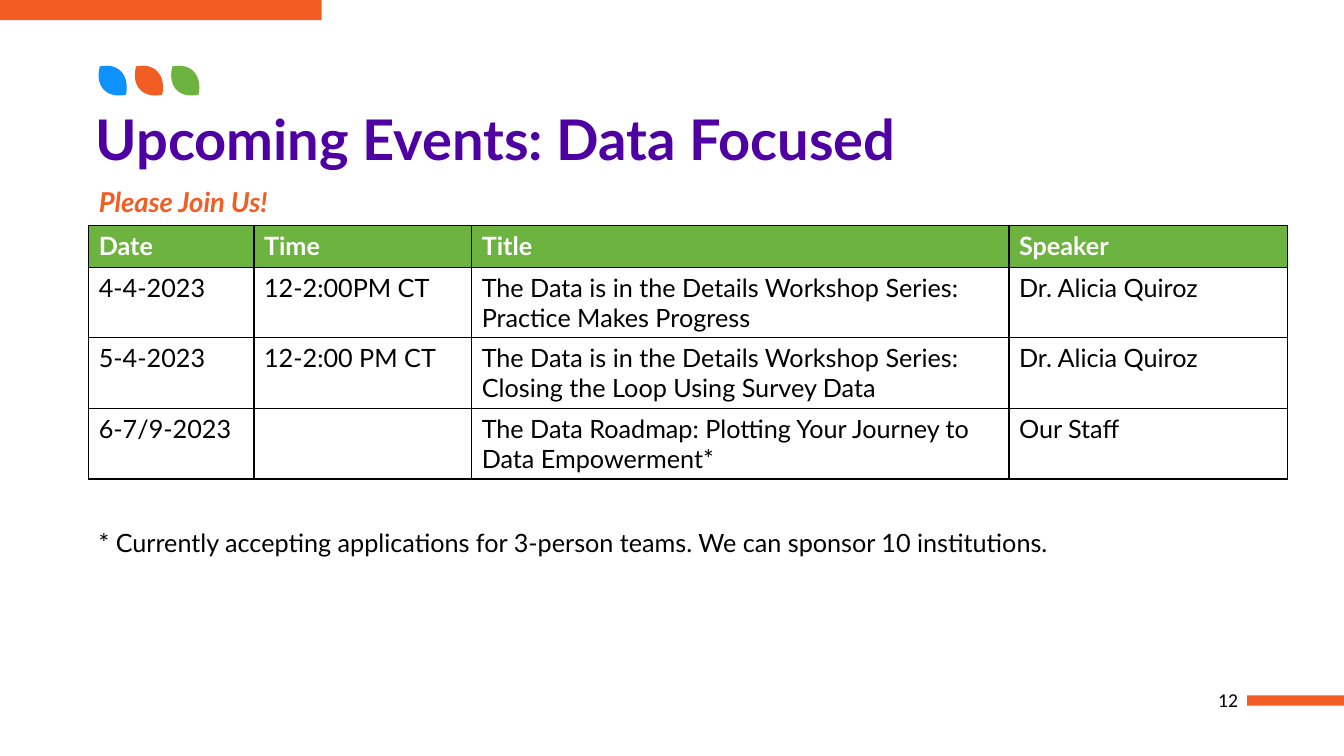
"""Build the slide of upcoming data events."""
import lxml.etree
import pptx
import pptx.dml.color
import pptx.enum.shapes
import pptx.enum.text
import pptx.oxml.ns
import pptx.util

ORANGE = pptx.dml.color.RGBColor(0xF1, 0x5D, 0x22)
GREEN = pptx.dml.color.RGBColor(0x6C, 0xB3, 0x3F)
BLUE = pptx.dml.color.RGBColor(0x0D, 0x92, 0xFF)
PURPLE = pptx.dml.color.RGBColor(0x4F, 0x00, 0xA3)
BLACK = pptx.dml.color.RGBColor(0, 0, 0)
WHITE = pptx.dml.color.RGBColor(0xFF, 0xFF, 0xFF)

COLUMNS, ROWS = 133.33, 75
MARGIN, CONTENT_WIDTH = 8.8, 118.9
LEAF_START = (0.5, 0.4)
LEAF_CURVES = [
    [(0, 2.4), (1.2, 3.6), (3.1, 3.2)],
    [(3.5, 1.2), (2.3, 0), LEAF_START],
]
LEAF_PITCH = 3.6
EVENTS = [
    ["Date", "Time", "Title", "Speaker"],
    ["4-4-2023", "12-2:00PM CT",
     "The Data is in the Details Workshop Series: Practice Makes Progress",
     "Dr. Alicia Quiroz"],
    ["5-4-2023", "12-2:00 PM CT",
     "The Data is in the Details Workshop Series: Closing the Loop Using Survey Data",
     "Dr. Alicia Quiroz"],
    ["6-7/9-2023", "",
     "The Data Roadmap: Plotting Your Journey to Data Empowerment*", "Our Staff"],
]
EVENT_COLUMNS = [16.4, 21.6, 53.3, 27.6]
HEADER_ROW, EVENT_ROW = 4.1, 7


def grid(cells):
    return pptx.util.Inches(cells / 10)


def place(shape, left, top, width, height):
    shape.left, shape.top = grid(left), grid(top)
    shape.width, shape.height = grid(width), grid(height)


def write(frame, words, size, color, font="Lato", bold=False, italic=False,
          align=pptx.enum.text.PP_ALIGN.LEFT):
    frame.text = words
    paragraph = frame.paragraphs[0]
    paragraph.alignment = align
    for run in paragraph.runs:
        run.font.name, run.font.size = font, pptx.util.Pt(size)
        run.font.bold, run.font.italic = bold, italic
        run.font.color.rgb = color
    return paragraph


def paint(shape, color):
    shape.shadow.inherit = False
    shape.fill.solid()
    shape.fill.fore_color.rgb = color
    shape.line.fill.background()


def add_bar(slide, left, top, width, height):
    bar = slide.shapes.add_shape(
        pptx.enum.shapes.MSO_SHAPE.RECTANGLE,
        grid(left), grid(top), grid(width), grid(height))
    paint(bar, ORANGE)


def curve_points(start, first, second, end, steps=16):
    for step in range(1, steps + 1):
        t = step / steps
        yield tuple(
            (1 - t) ** 3 * a + 3 * (1 - t) ** 2 * t * b + 3 * (1 - t) * t ** 2 * c + t ** 3 * d
            for a, b, c, d in zip(start, first, second, end))


def add_leaf(slide, left, top, color):
    points, pen = [], LEAF_START
    for curve in LEAF_CURVES:
        points += curve_points(pen, *curve)
        pen = curve[-1]
    outline = [(grid(left + x), grid(top + y)) for x, y in [LEAF_START] + points]
    builder = slide.shapes.build_freeform(*outline[0])
    builder.add_line_segments(outline[1:], close=True)
    paint(builder.convert_to_shape(), color)


def add_label(slide, left, top, width, height, words, size, **style):
    label = slide.shapes.add_textbox(grid(left), grid(top), grid(width), grid(height))
    label.text_frame.word_wrap = True
    label.text_frame.vertical_anchor = pptx.enum.text.MSO_ANCHOR.MIDDLE
    write(label.text_frame, words, size, BLACK, **style)


def fill_placeholder(holder, box, words, size, color, **style):
    place(holder, *box)
    frame = holder.text_frame
    frame.auto_size = pptx.enum.text.MSO_AUTO_SIZE.NONE
    frame.vertical_anchor = pptx.enum.text.MSO_ANCHOR.MIDDLE
    paragraph = write(frame, words, size, color, **style)
    paragraph.space_before = pptx.util.Pt(0)
    return paragraph


def remove_bullet(paragraph):
    properties = paragraph._p.get_or_add_pPr()
    properties.set("marL", "0")
    properties.set("indent", "0")
    lxml.etree.SubElement(properties, pptx.oxml.ns.qn("a:buNone"))


def add_borders(cell):
    properties = cell._tc.get_or_add_tcPr()
    for side in ("a:lnL", "a:lnR", "a:lnT", "a:lnB"):
        border = lxml.etree.SubElement(
            properties, pptx.oxml.ns.qn(side), w=str(pptx.util.Pt(1)))
        fill = lxml.etree.SubElement(border, pptx.oxml.ns.qn("a:solidFill"))
        lxml.etree.SubElement(fill, pptx.oxml.ns.qn("a:srgbClr"), val=str(BLACK))


def add_events(slide, left, top):
    heights = [HEADER_ROW] + [EVENT_ROW] * (len(EVENTS) - 1)
    table = slide.shapes.add_table(
        len(EVENTS), len(EVENT_COLUMNS), grid(left), grid(top),
        grid(sum(EVENT_COLUMNS)), grid(sum(heights))).table
    table.horz_banding = False
    for column, width in zip(table.columns, EVENT_COLUMNS):
        column.width = grid(width)
    for number, (event, height) in enumerate(zip(EVENTS, heights)):
        table.rows[number].height = grid(height)
        is_header = number == 0
        for position, words in enumerate(event):
            cell = table.cell(number, position)
            write(cell.text_frame, words, 18, WHITE if is_header else BLACK, bold=is_header)
            add_borders(cell)
            if is_header:
                cell.fill.solid()
                cell.fill.fore_color.rgb = GREEN
            else:
                cell.fill.background()


def main():
    deck = pptx.Presentation()
    deck.slide_width, deck.slide_height = grid(COLUMNS), grid(ROWS)
    slide = deck.slides.add_slide(deck.slide_layouts[1])

    add_bar(slide, COLUMNS - 9.6, 69, 9.6, 1)
    add_bar(slide, 0, 0, 31.9, 2)
    for position, color in enumerate((BLUE, ORANGE, GREEN)):
        add_leaf(slide, 9.4 + position * LEAF_PITCH, 6.2, color)
    add_label(slide, 115.2, 68, 8.6, 2.8, "12", 14, font="Calibri",
              align=pptx.enum.text.PP_ALIGN.RIGHT)

    heading = fill_placeholder(slide.shapes.title, (8.5, 10.6, 114.2, 7),
                               "Upcoming Events: Data Focused", 40, PURPLE, bold=True)
    heading.line_spacing = 0.9
    invitation = fill_placeholder(slide.placeholders[1], (MARGIN, 17.8, 114.2, 4.4),
                                  "Please Join Us!", 19.6, ORANGE, bold=True, italic=True)
    remove_bullet(invitation)

    add_events(slide, MARGIN, 22.4)
    add_label(slide, MARGIN, 51.8, CONTENT_WIDTH, 4,
              "* Currently accepting applications for 3-person teams. "
              "We can sponsor 10 institutions.", 18)
    deck.save("out.pptx")


if __name__ == "__main__":
    main()
